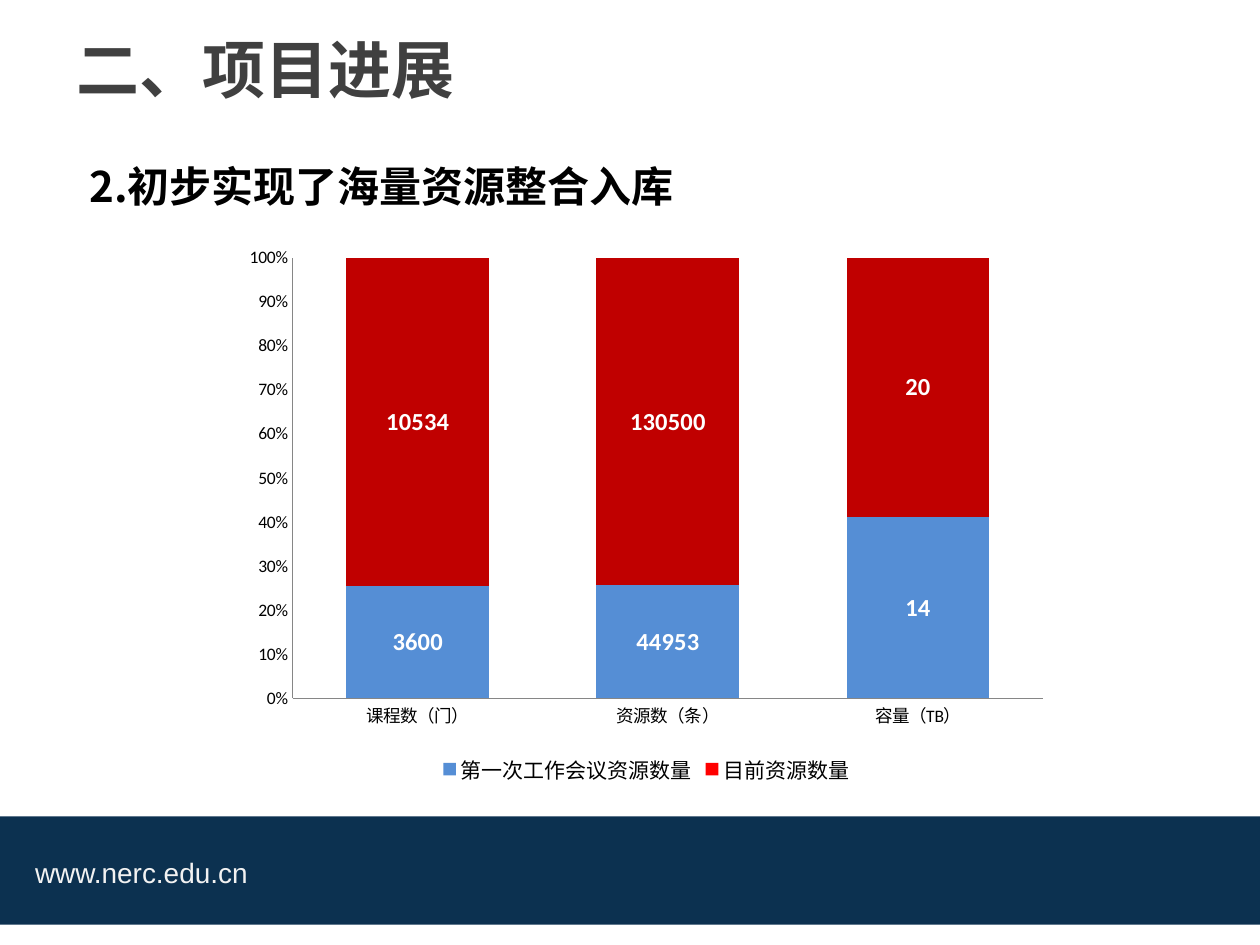
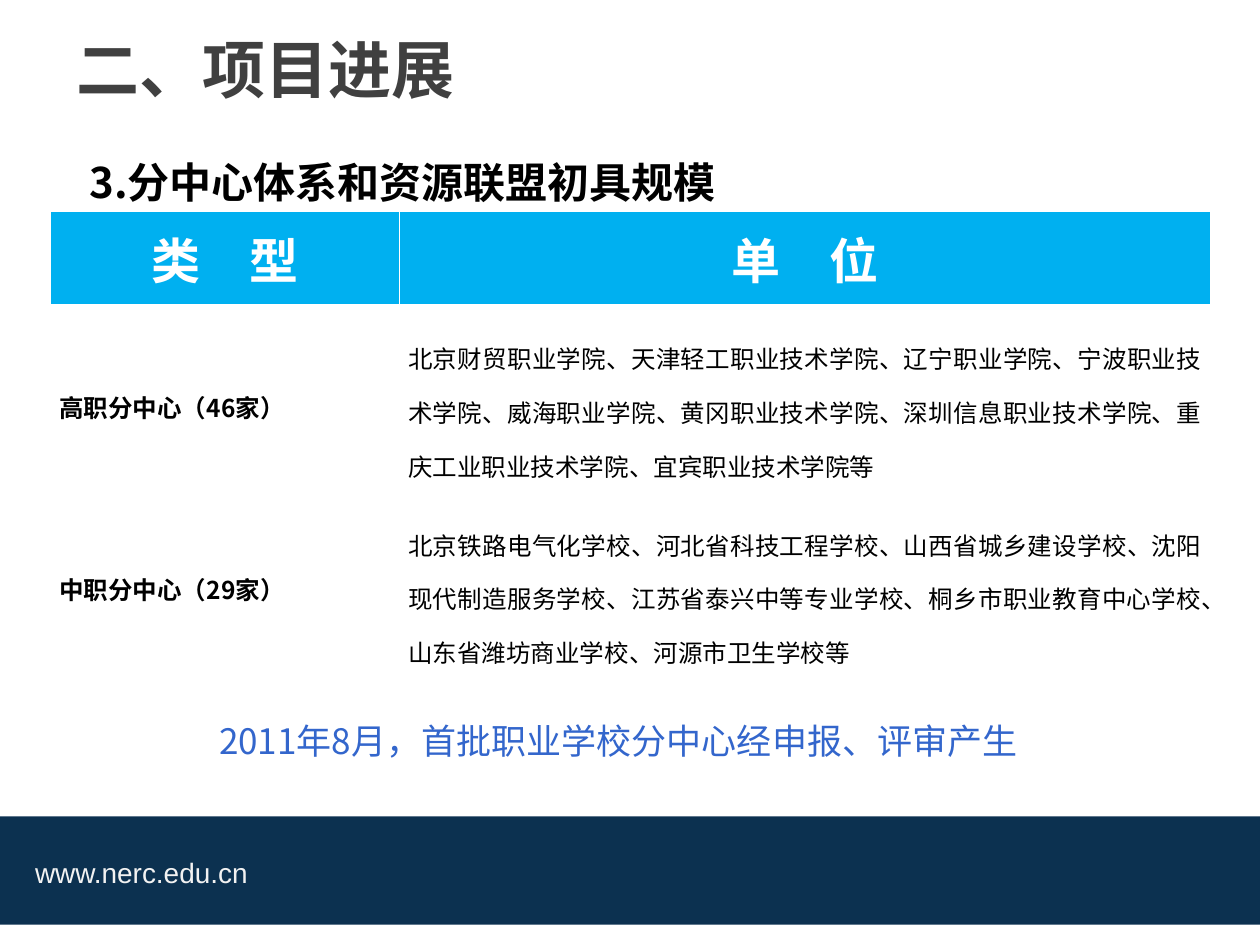
"""Build two project progress slides: a resource chart and a table of sub-centres."""
from dataclasses import dataclass

from lxml import etree
from pptx import Presentation
from pptx import util as u
from pptx.chart.data import CategoryChartData
from pptx.dml.color import RGBColor
from pptx.enum import chart as ch, shapes, text
from pptx.oxml.ns import qn
from pptx.slide import Slide
from pptx.table import _Cell
from pptx.text.text import Font, TextFrame

WHITE = RGBColor(0xFF, 0xFF, 0xFF)
BLACK = RGBColor(0, 0, 0)
NAVY = RGBColor(0x0C, 0x31, 0x50)
PALE = RGBColor(0xF2, 0xF2, 0xF2)
CHARCOAL = RGBColor(0x40, 0x40, 0x40)
SKY = RGBColor(0x00, 0xB0, 0xF0)
NOTE_BLUE = RGBColor(0x33, 0x66, 0xCC)
BAR_BLUE = RGBColor(0x55, 0x8E, 0xD5)
BAR_RED = RGBColor(0xC0, 0, 0)
KEY_RED = RGBColor(0xFF, 0, 0)
AXIS_GREY = RGBColor(0x86, 0x86, 0x86)
CJK, LATIN, FOOTER_FONT = "Noto Sans CJK SC", "Calibri", "Arial"


@dataclass(frozen=True)
class Style:
    """Look of one piece of text."""
    size: float
    color: RGBColor
    bold: bool = False
    name: str = CJK
    align: text.PP_ALIGN = text.PP_ALIGN.LEFT
    spacing: u.Length | float | None = None


@dataclass(frozen=True)
class Place:
    """Rectangle in inches."""
    left: float
    top: float
    width: float
    height: float

    def lengths(self) -> list[u.Length]:
        return [u.Inches(side) for side in (self.left, self.top, self.width, self.height)]


@dataclass(frozen=True)
class Series:
    """One chart series, with its legend and bar colours."""
    name: str
    values: tuple[int, ...]
    key_color: RGBColor
    bar_color: RGBColor


TITLE = Style(36, CHARCOAL, True, spacing=u.Pt(57.6))
HEADING = Style(24, BLACK, True, spacing=u.Pt(37))
FOOTER = Style(16, PALE, name=FOOTER_FONT)
NOTE = Style(20, NOTE_BLUE)
HEADER = Style(28, WHITE, True, align=text.PP_ALIGN.CENTER)
LABEL = Style(14, BLACK, True, align=text.PP_ALIGN.JUSTIFY, spacing=1.5)
MEMBERS = Style(14, BLACK, name=LATIN, align=text.PP_ALIGN.JUSTIFY, spacing=1.5)

CATEGORIES = ("课程数（门）", "资源数（条）", "容量（TB）")
SERIES = (
    Series("第一次工作会议资源数量", (3600, 44953, 14), BAR_BLUE, BAR_BLUE),
    Series("目前资源数量", (10534, 130500, 20), KEY_RED, BAR_RED),
)
COLUMN_WIDTHS = (2.77, 6.44)
ROW_HEIGHTS = (0.74, 1.48, 1.41)
CENTRES = (
    ("类　型", "单　位"),
    ("高职分中心（46家）",
     "北京财贸职业学院、天津轻工职业技术学院、辽宁职业学院、宁波职业技术学院、"
     "威海职业学院、黄冈职业技术学院、深圳信息职业技术学院、重庆工业职业技术学院、"
     "宜宾职业技术学院等"),
    ("中职分中心（29家）",
     "北京铁路电气化学校、河北省科技工程学校、山西省城乡建设学校、沈阳现代制造服务学校、"
     "江苏省泰兴中等专业学校、桐乡市职业教育中心学校、山东省潍坊商业学校、河源市卫生学校等"),
)


def format_font(font: Font, style: Style) -> None:
    """Apply size, colour and both Latin and East Asian typefaces."""
    font.size, font.bold = u.Pt(style.size), style.bold
    font.color.rgb = style.color
    font.name = style.name
    east_asian = etree.Element(qn("a:ea"), typeface=CJK)
    font._element.find(qn("a:latin")).addnext(east_asian)


def write(frame: TextFrame, words: str, style: Style) -> None:
    """Fill a frame with one styled paragraph."""
    frame.text = words
    para = frame.paragraphs[0]
    para.alignment, para.line_spacing = style.align, style.spacing
    for span in para.runs:
        format_font(span.font, style)


def add_text(page: Slide, place: Place, words: str, style: Style, wrap: bool = True) -> TextFrame:
    """Add a text box."""
    frame = page.shapes.add_textbox(*place.lengths()).text_frame
    frame.word_wrap = wrap
    write(frame, words, style)
    return frame


def add_page(deck: Presentation, heading: str, place: Place) -> Slide:
    """Add a slide with the shared band, footer, title and a heading."""
    page = deck.slides.add_slide(deck.slide_layouts.get_by_name("Title Only"))
    band = page.shapes.add_shape(shapes.MSO_SHAPE.RECTANGLE, *Place(0, 6.48, 10, 0.86).lengths())
    band.shadow.inherit = False
    band.fill.solid()
    band.fill.fore_color.rgb = NAVY
    band.line.fill.background()
    add_text(page, Place(0.18, 6.74, 1.91, 0.37), "www.nerc.edu.cn", FOOTER, wrap=False)
    title = page.shapes.title
    title.left, title.top, title.width, title.height = Place(0.51, -0.03, 3.39, 0.94).lengths()
    title.text_frame.auto_size = text.MSO_AUTO_SIZE.NONE
    title.text_frame.vertical_anchor = text.MSO_ANCHOR.MIDDLE
    write(title.text_frame, "二、项目进展", TITLE)
    frame = add_text(page, place, heading, HEADING)
    frame.margin_left = frame.margin_right = u.Inches(0.09)
    frame.margin_top = frame.margin_bottom = u.Inches(0.04)
    return page


def add_resource_chart(page: Slide) -> None:
    """Add the stacked chart of earlier and current resources."""
    data = CategoryChartData()
    data.categories = CATEGORIES
    for entry in SERIES:
        data.add_series(entry.name, entry.values)
    chart = page.shapes.add_chart(
        ch.XL_CHART_TYPE.COLUMN_STACKED_100, *Place(1.85, 1.88, 6.56, 4.39).lengths(), data).chart
    format_font(chart.font, Style(10, BLACK, name=LATIN))
    chart.has_title = False
    chart.has_legend = True
    chart.legend.position = ch.XL_LEGEND_POSITION.BOTTOM
    chart.legend.include_in_layout = False
    format_font(chart.legend.font, Style(12, BLACK))
    for axis in (chart.category_axis, chart.value_axis):
        axis.has_major_gridlines = False
        axis.major_tick_mark = axis.minor_tick_mark = ch.XL_TICK_MARK.NONE
        axis.format.line.color.rgb = AXIS_GREY
        axis.format.line.width = u.Pt(0.75)
    ticks = chart.value_axis.tick_labels
    ticks.number_format, ticks.number_format_is_linked = "0%", False
    plot = chart.plots[0]
    plot.gap_width, plot.overlap, plot.vary_by_categories = 75, 100, False
    for entry, series in zip(SERIES, plot.series):
        series.format.fill.solid()
        series.format.fill.fore_color.rgb = entry.key_color
        if entry.bar_color != entry.key_color:
            for index in range(len(entry.values)):
                fill = series.points[index].format.fill
                fill.solid()
                fill.fore_color.rgb = entry.bar_color
        series.data_labels.show_value = True
        format_font(series.data_labels.font, Style(14, WHITE, True, LATIN))


def format_cell(cell: _Cell, fill: RGBColor) -> None:
    """Give a cell thin white borders and a solid fill."""
    properties = cell._tc.get_or_add_tcPr()
    for side in ("a:lnL", "a:lnR", "a:lnT", "a:lnB"):
        line = etree.SubElement(properties, qn(side), w=str(u.Pt(1)))
        solid = etree.SubElement(line, qn("a:solidFill"))
        etree.SubElement(solid, qn("a:srgbClr"), val=str(WHITE))
    cell.fill.solid()
    cell.fill.fore_color.rgb = fill


def add_centre_table(page: Slide) -> None:
    """Add the table of sub-centre types and member schools."""
    place = Place(0.4, 1.68, sum(COLUMN_WIDTHS), sum(ROW_HEIGHTS))
    table = page.shapes.add_table(len(CENTRES), len(COLUMN_WIDTHS), *place.lengths()).table
    for column, width in zip(table.columns, COLUMN_WIDTHS):
        column.width = u.Inches(width)
    for row, height in zip(table.rows, ROW_HEIGHTS):
        row.height = u.Inches(height)
    for row_index, row_words in enumerate(CENTRES):
        for column_index, words in enumerate(row_words):
            cell = table.cell(row_index, column_index)
            is_header, is_label = row_index == 0, column_index == 0
            format_cell(cell, SKY if is_header else WHITE)
            style = HEADER if is_header else LABEL if is_label else MEMBERS
            write(cell.text_frame, words, style)
            cell.vertical_anchor = text.MSO_ANCHOR.MIDDLE
            if is_header:
                continue
            cell.margin_left = cell.margin_right = u.Inches(0.07)
            cell.margin_top = cell.margin_bottom = u.Inches(0)
            if not is_label:
                cell.vertical_anchor = text.MSO_ANCHOR.TOP
                cell.margin_top = u.Inches(0.14)


def main() -> None:
    """Build and save the deck."""
    deck = Presentation()
    deck.slide_width, deck.slide_height = u.Inches(10), u.Inches(7.5)
    add_resource_chart(add_page(deck, "2.初步实现了海量资源整合入库", Place(0.62, 1.12, 9.38, 0.61)))
    page = add_page(deck, "3.分中心体系和资源联盟初具规模", Place(0.62, 1.09, 6.17, 0.54))
    add_centre_table(page)
    add_text(page, Place(1.64, 5.66, 6.64, 0.44), "2011年8月，首批职业学校分中心经申报、评审产生", NOTE)
    deck.save("out.pptx")


if __name__ == "__main__":
    main()
